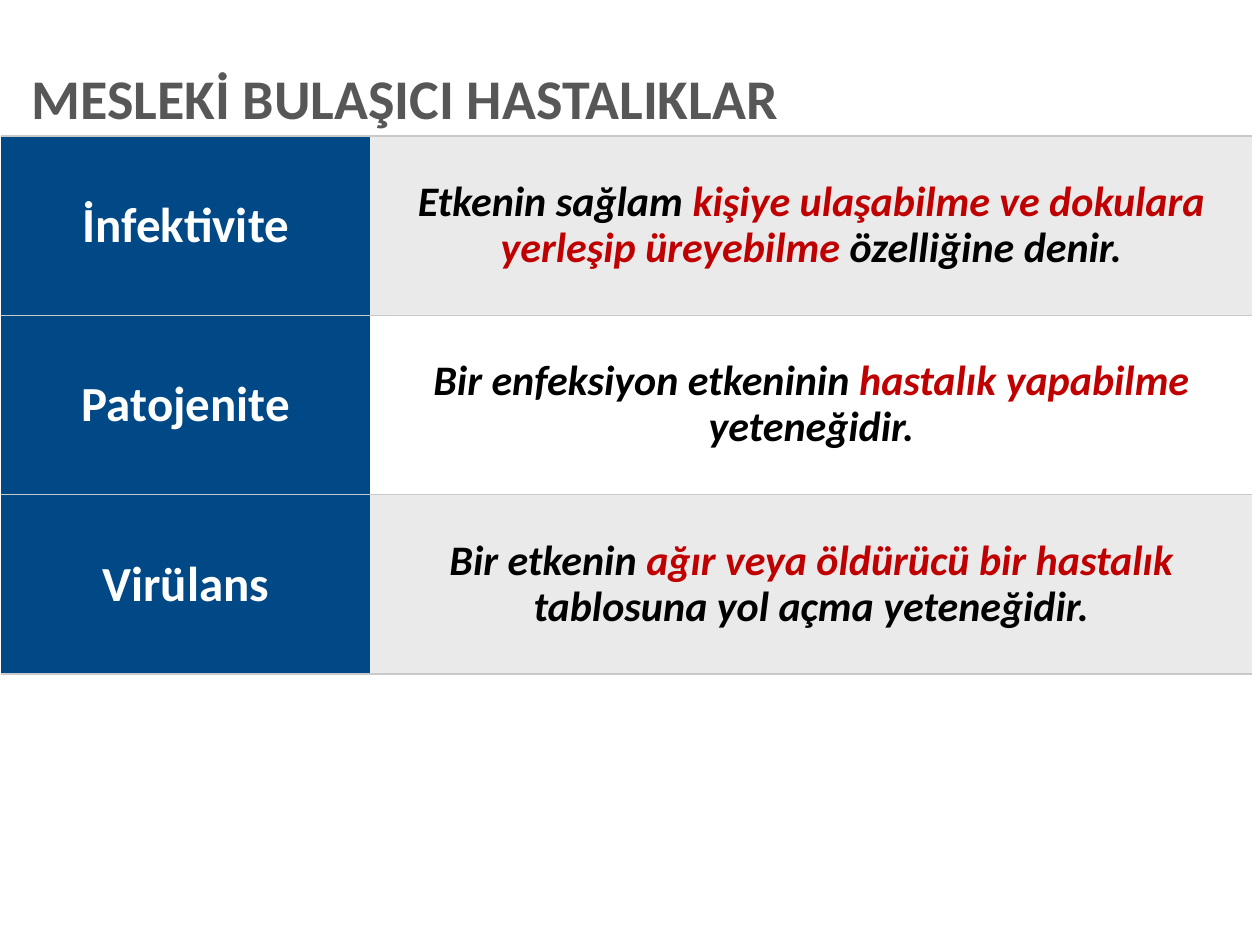
from dataclasses import dataclass

from lxml.etree import SubElement
from pptx import Presentation
from pptx.dml.color import RGBColor
from pptx.enum.text import MSO_ANCHOR as Anchor, PP_ALIGN as Align
from pptx.oxml.ns import qn
from pptx.util import Inches, Pt

BLUE, GRAY, WHITE, BLACK, RED = "004986", "EAEAEA", "FFFFFF", "000000", "C00000"
RULE, TITLE = "C9C9C9", "575757"
PLAIN = "{2D5ABB26-0587-4C30-8999-92F81FD0307C}"


@dataclass
class Term:
    name: str
    lead: str
    key: str
    tail: str


TERMS = [
    Term("İnfektivite", "Etkenin sağlam ",
         "kişiye ulaşabilme ve dokulara yerleşip üreyebilme",
         " özelliğine denir."),
    Term("Patojenite", "Bir enfeksiyon etkeninin ",
         "hastalık yapabilme ", "yeteneğidir."),
    Term("Virülans", "Bir etkenin ",
         "ağır veya öldürücü bir hastalık ",
         "tablosuna yol açma yeteneğidir."),
]


def color(code: str) -> RGBColor:
    return RGBColor.from_string(code)


def write(para, text: str, *, size: int, ink: str, slant: bool = False) -> None:
    run = para.add_run()
    run.text = text
    font = run.font
    font.name, font.size = "Calibri", Pt(size)
    font.bold, font.italic = True, slant
    font.color.rgb = color(ink)


def rule(cell) -> None:
    props = cell._tc.get_or_add_tcPr()
    for spot, tag in enumerate(("a:lnT", "a:lnB")):
        line = SubElement(props, qn(tag), w=str(Pt(1)))
        fill = SubElement(line, qn("a:solidFill"))
        SubElement(fill, qn("a:srgbClr"), val=RULE)
        props.insert(spot, line)


def dress(cell, back: str):
    cell.fill.solid()
    cell.fill.fore_color.rgb = color(back)
    cell.vertical_anchor = Anchor.MIDDLE
    rule(cell)
    para = cell.text_frame.paragraphs[0]
    para.alignment = Align.CENTER
    return para


def draw_terms(slide, terms: list[Term]) -> None:
    frame = slide.shapes.add_table(len(terms), 2, Inches(0.01), Inches(1.08),
                                   Inches(9.93), Inches(4.27))
    table = frame.table
    table.first_row = table.horz_banding = False
    table._tbl.tblPr.find(qn("a:tableStyleId")).text = PLAIN
    for col, width in zip(table.columns, (2.93, 7)):
        col.width = Inches(width)
    for num, term in enumerate(terms):
        write(dress(table.cell(num, 0), BLUE), term.name, size=28, ink=WHITE)
        para = dress(table.cell(num, 1), WHITE if num % 2 else GRAY)
        para.line_spacing = 0.9
        for text, ink in ((term.lead, BLACK), (term.key, RED), (term.tail, BLACK)):
            write(para, text, size=24, ink=ink, slant=True)


def draw_title(slide, text: str) -> None:
    box = slide.shapes.add_textbox(Inches(0.25), Inches(0.45),
                                   Inches(9.64), Inches(0.71))
    frame = box.text_frame
    frame.word_wrap = True
    frame.margin_left = frame.margin_right = 0
    frame.vertical_anchor = Anchor.MIDDLE
    para = frame.paragraphs[0]
    para.line_spacing = 0.9
    write(para, text, size=32, ink=TITLE)


def main() -> None:
    deck = Presentation()
    deck.slide_width, deck.slide_height = Inches(10), Inches(7.5)
    slide = deck.slides.add_slide(deck.slide_layouts[6])
    draw_terms(slide, TERMS)
    draw_title(slide, "MESLEKİ BULAŞICI HASTALIKLAR")
    deck.save("out.pptx")


if __name__ == "__main__":
    main()
